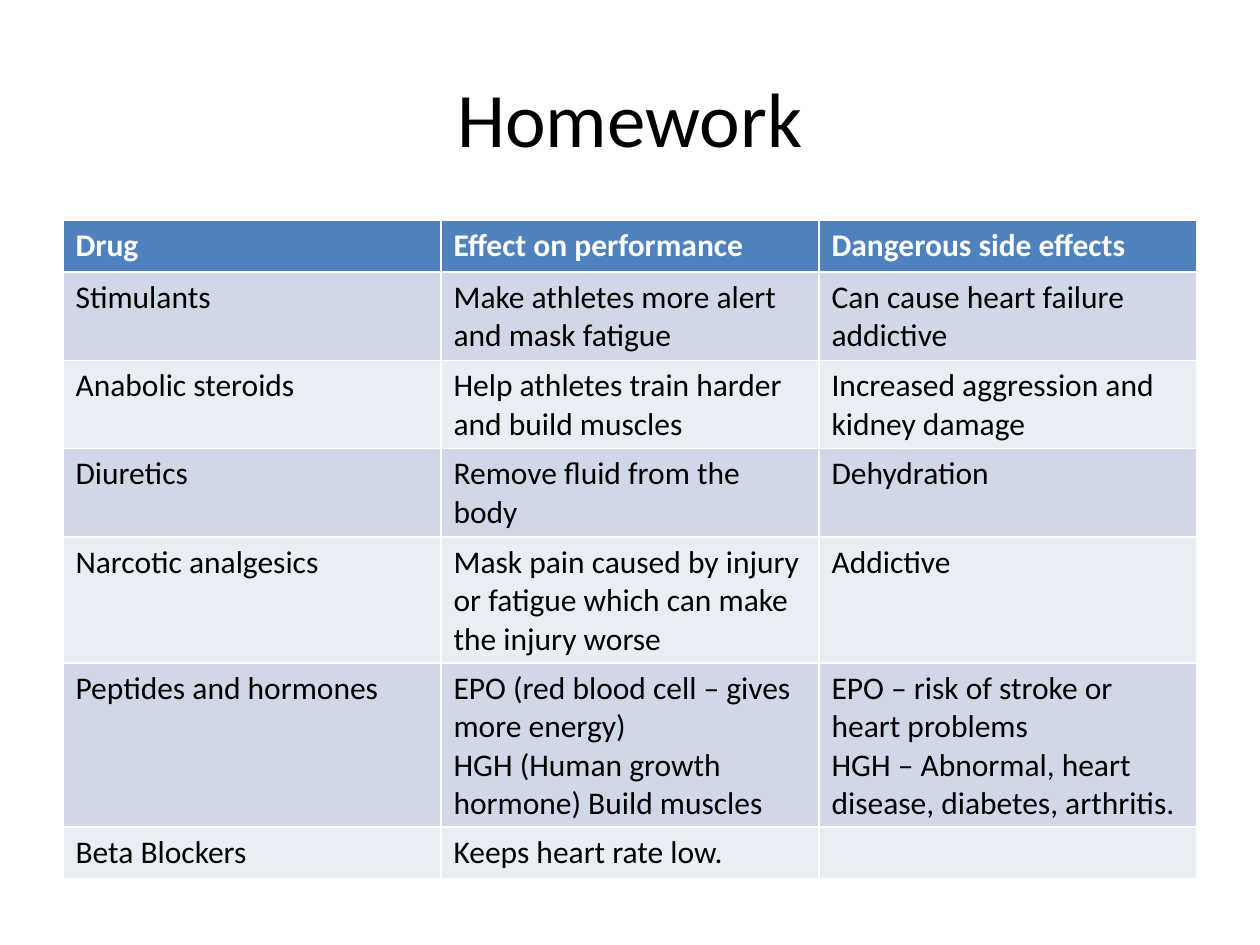
from pptx import Presentation
from pptx.dml.color import RGBColor as Rgb
from pptx.enum.text import MSO_ANCHOR as Anchor, PP_ALIGN as Align
from pptx.util import Inches, Pt

HUES = {"head": "4F81BD", "odd": "D0D8E8", "even": "E9EDF4",
        "ink": "000000", "white": "FFFFFF"}
FONT = "Calibri"
ROWS = [
    ("Drug", "Effect on performance", "Dangerous side effects"),
    ("Stimulants", "Make athletes more alert and mask fatigue",
     "Can cause heart failure\naddictive"),
    ("Anabolic steroids", "Help athletes train harder and build muscles",
     "Increased aggression and kidney damage"),
    ("Diuretics", "Remove fluid from the body", "Dehydration"),
    ("Narcotic analgesics",
     "Mask pain caused by injury or fatigue which can make the injury worse",
     "Addictive"),
    ("Peptides and hormones",
     "EPO (red blood cell – gives more energy)\n"
     "HGH (Human growth hormone) Build muscles",
     "EPO – risk of stroke or heart problems\n"
     "HGH – Abnormal, heart disease, diabetes, arthritis."),
    ("Beta Blockers", "Keeps heart rate low.", ""),
]


def style(frame, size, hue, bold=False):
    """Format every run in a text frame."""
    for para in frame.paragraphs:
        for run in para.runs:
            font = run.font
            font.name, font.size, font.bold = FONT, Pt(size), bold
            font.color.rgb = Rgb.from_string(HUES[hue])


def add_title(slide, text, box):
    """Place the centred title in the box."""
    frame = slide.shapes.add_textbox(*box).text_frame
    frame.word_wrap = True
    frame.vertical_anchor = Anchor.MIDDLE
    frame.text = text
    frame.paragraphs[0].alignment = Align.CENTER
    style(frame, 44, "ink")


def add_grid(slide, rows, box):
    """Fill the box with a table that has a header and banded rows."""
    table = slide.shapes.add_table(len(rows), len(rows[0]), *box).table
    for r, row in enumerate(rows):
        head = r == 0
        band = "head" if head else "odd" if r % 2 else "even"
        for c, text in enumerate(row):
            cell = table.cell(r, c)
            cell.fill.solid()
            cell.fill.fore_color.rgb = Rgb.from_string(HUES[band])
            cell.text_frame.text = text
            style(cell.text_frame, 18, "white" if head else "ink", head)


def main():
    """Build and save the homework slide."""
    deck = Presentation()
    deck.slide_width, deck.slide_height = Inches(10), Inches(7.5)
    slide = deck.slides.add_slide(deck.slide_layouts[6])
    left, width = Inches(0.5), Inches(9)
    add_title(slide, "Homework", (left, Inches(0.3), width, Inches(1.25)))
    high = Inches(0.41) * len(ROWS)
    add_grid(slide, ROWS, (left, Inches(1.75), width, high))
    deck.save("out.pptx")


if __name__ == "__main__":
    main()
